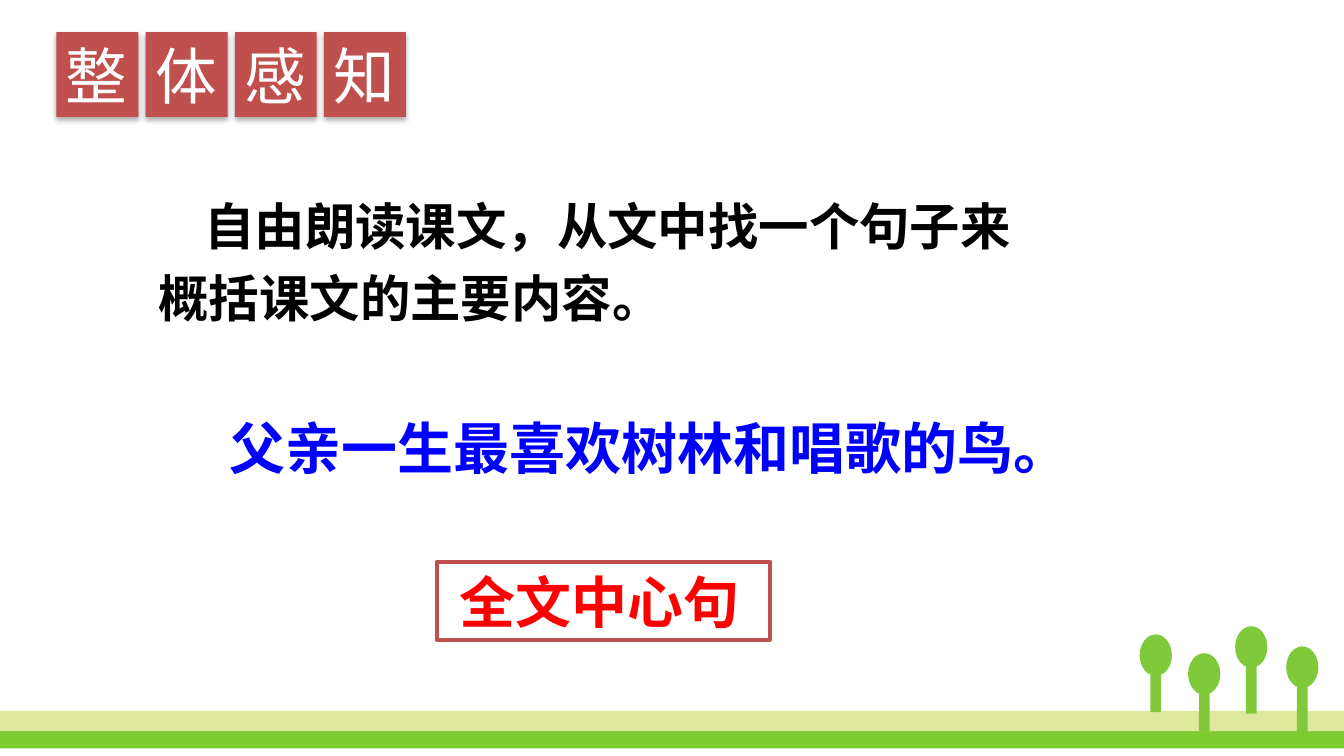
from lxml import etree
from pptx import Presentation
from pptx.dml.color import RGBColor
from pptx.enum import shapes, text
from pptx.oxml import ns
from pptx.util import Inches, Pt

WHITE = RGBColor(0xFF, 0xFF, 0xFF)
BLACK = RGBColor(0, 0, 0)
BLUE = RGBColor(0, 0, 0xFF)
RED = RGBColor(0xFF, 0, 0)
BRICK = RGBColor(0xC0, 0x50, 0x4D)
GRASS = RGBColor(0x7F, 0xCB, 0x32)
PALE = RGBColor(0xDD, 0xE8, 0x9A)
LEAF = RGBColor(0x80, 0xC9, 0x3B)
NOTO = "Noto Sans CJK SC"
CALIBRI = "Calibri"
RECT = shapes.MSO_SHAPE.RECTANGLE
OVAL = shapes.MSO_SHAPE.OVAL


def add_form(slide, kind, box, fill):
    """Add a filled preset shape without line or shadow."""
    form = slide.shapes.add_shape(kind, *map(Inches, box))
    form.shadow.inherit = False
    form.fill.solid()
    form.fill.fore_color.rgb = fill
    form.line.fill.background()
    return form


def set_frame(shape, wrap=True):
    """Set the insets and wrapping of a shape and return its text frame."""
    frame = shape.text_frame
    frame.margin_left = frame.margin_right = Inches(0.07)
    frame.margin_top = frame.margin_bottom = Inches(0.04)
    frame.word_wrap = wrap
    frame.vertical_anchor = text.MSO_ANCHOR.TOP
    return frame


def add_run(para, words, size, face, color, bold=True, indent=0):
    """Add a styled run to a left-aligned paragraph with a first-line indent."""
    para.alignment = text.PP_ALIGN.LEFT
    para._p.get_or_add_pPr().set("indent", str(Inches(indent)))
    run = para.add_run()
    run.text = words
    font = run.font
    font.size, font.name, font.bold = Pt(size), face, bold
    font.color.rgb = color
    east = etree.SubElement(run._r.get_or_add_rPr(), ns.qn("a:ea"))
    east.set("typeface", face)


def cast_shade(shape):
    """Give a shape a soft shadow straight below it."""
    effects = shape._element.spPr.find(ns.qn("a:effectLst"))
    shade = etree.SubElement(effects, ns.qn("a:outerShdw"), blurRad=str(Pt(3.1)),
                             dist=str(Pt(1.8)), dir="5400000", rotWithShape="0")
    color = etree.SubElement(shade, ns.qn("a:srgbClr"), val="000000")
    etree.SubElement(color, ns.qn("a:alpha"), val="35000")


def add_meadow(slide, left, top, width):
    """Draw the two ground bands and the four trees above them."""
    add_form(slide, RECT, (left, top + 0.15, width, 0.13), GRASS)
    add_form(slide, RECT, (left, top, width, 0.15), PALE)
    trees = ((8.48, -0.57, 0.28), (8.84, -0.43, 0.28),
             (9.19, -0.63, 0.35), (9.57, -0.48, 0.35))
    for x, y, height in trees:
        add_form(slide, OVAL, (left + x, top + y, 0.24, 0.31), LEAF)
        add_form(slide, RECT, (left + x + 0.08, top + y + 0.3, 0.08, height), LEAF)


def add_title(slide, left, top, width, words):
    """Set each character of the title in its own tile."""
    side = 0.61
    step = (width - side) / (len(words) - 1)
    for i, word in enumerate(words):
        tile = add_form(slide, RECT, (left + i * step, top, side, 0.63), BRICK)
        cast_shade(tile)
        frame = set_frame(tile, False)
        frame.vertical_anchor = text.MSO_ANCHOR.MIDDLE
        add_run(frame.paragraphs[0], word, 33, NOTO, WHITE, False)


def add_task(slide, box):
    """Write the reading task on two lines."""
    frame = set_frame(slide.shapes.add_textbox(*map(Inches, box)))
    first, second = frame.paragraphs[0], frame.add_paragraph()
    first.line_spacing = second.line_spacing = 1.2
    add_run(first, "自由朗读课文，从文中找一个句子来", 27, NOTO, BLACK, indent=0.34)
    add_run(second, "概括课文的主要内容。", 27, NOTO, BLACK)


def add_answer(slide, box):
    """Write the sentence that answers the task."""
    frame = set_frame(slide.shapes.add_textbox(*map(Inches, box)))
    add_run(frame.paragraphs[0], "父亲一生最喜欢树林和唱歌的鸟。", 30, CALIBRI, BLUE,
            indent=0.56)


def add_label(slide, box):
    """Draw the framed label below the answer."""
    label = add_form(slide, RECT, box, WHITE)
    label.line.color.rgb = BRICK
    label.line.width = Pt(2)
    add_run(set_frame(label).paragraphs[0], "全文中心句", 30, CALIBRI, RED, indent=0.1)


def main():
    """Build the slide and save it."""
    deck = Presentation()
    deck.slide_width, deck.slide_height = Inches(10), Inches(10 * 9 / 16)
    slide = deck.slides.add_slide(deck.slide_layouts[6])
    add_meadow(slide, 0, 5.29, 10)
    add_task(slide, (1.11, 1.32, 7.28, 1.17))
    add_answer(slide, (1.08, 3.04, 7.31, 0.58))
    add_label(slide, (3.25, 4.18, 2.48, 0.58))
    add_title(slide, 0.42, 0.24, 2.6, "整体感知")
    deck.save("out.pptx")


if __name__ == "__main__":
    main()
